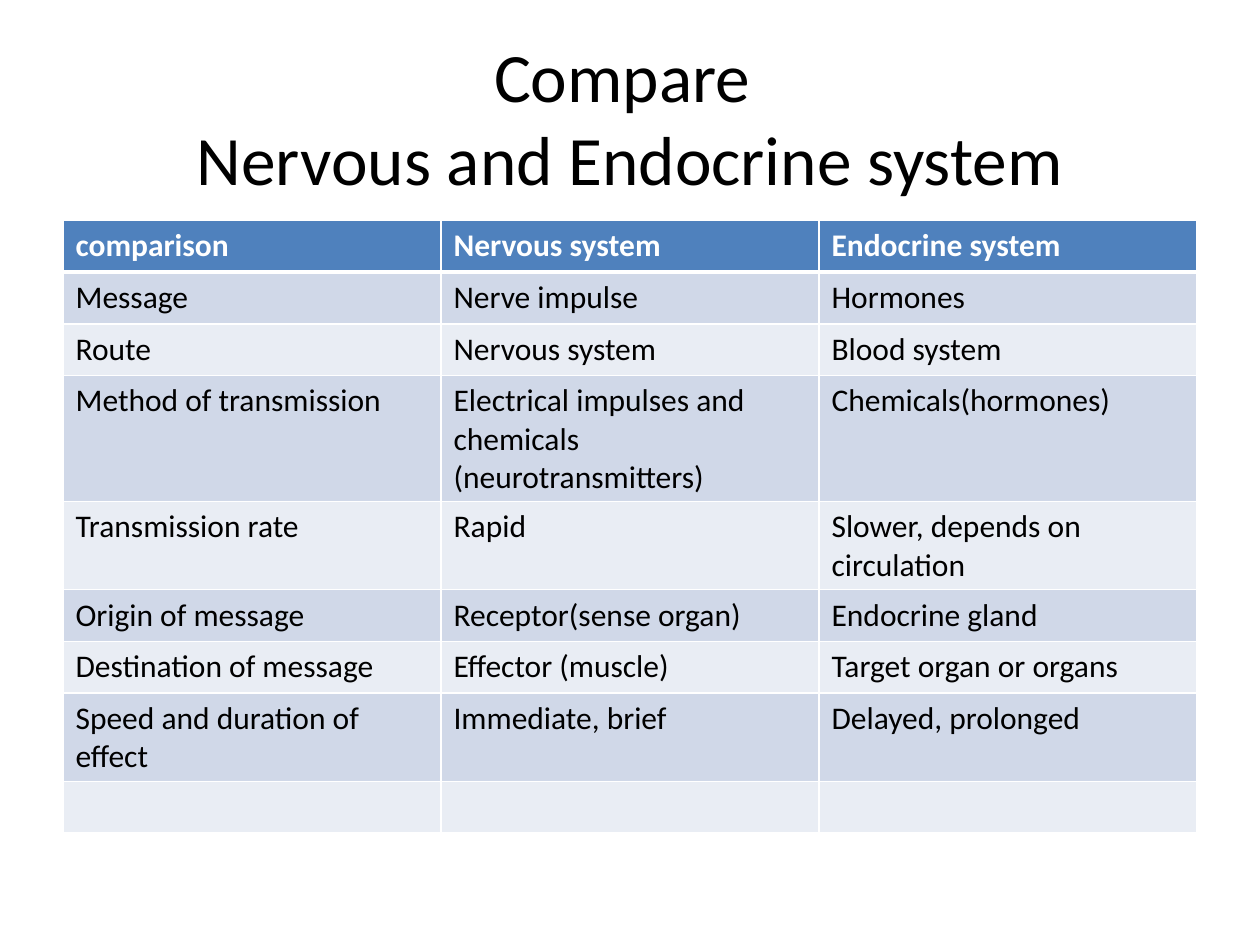
from dataclasses import dataclass

from lxml.etree import SubElement
from pptx import Presentation
from pptx.dml.color import RGBColor
from pptx.enum.text import MSO_ANCHOR, PP_ALIGN
from pptx.oxml.ns import qn
from pptx.util import Inches, Pt


@dataclass(frozen=True)
class Theme:
    font: str = "Calibri"
    text: str = "000000"
    light: str = "FFFFFF"
    header: str = "4F81BD"
    bands: tuple = ("D0D8E8", "E9EDF4")
    title_size: float = 39.6
    table_size: float = 18
    border: float = 1
    header_border: float = 3


THEME = Theme()


def write_text(frame, text, *, size, color=THEME.text, bold=False, align=PP_ALIGN.LEFT):
    paragraph = frame.paragraphs[0]
    paragraph.text = text
    paragraph.alignment = align
    for run in paragraph.runs:
        run.font.name = THEME.font
        run.font.size = Pt(size)
        run.font.bold = bold
        run.font.color.rgb = RGBColor.from_string(color)


def set_borders(cell, top, bottom):
    """Draw light cell borders; top and bottom widths are in points."""
    properties = cell._tc.get_or_add_tcPr()
    widths = {"a:lnL": THEME.border, "a:lnR": THEME.border, "a:lnT": top, "a:lnB": bottom}
    for position, (tag, width) in enumerate(widths.items()):
        line = SubElement(properties, qn(tag), w=str(Pt(width)))
        fill = SubElement(line, qn("a:solidFill"))
        SubElement(fill, qn("a:srgbClr"), val=THEME.light)
        properties.insert(position, line)


presentation = Presentation()
presentation.slide_width = Inches(10)
presentation.slide_height = Inches(7.5)
slide = presentation.slides.add_slide(presentation.slide_layouts[6])

margin = presentation.slide_width // 20
content_width = presentation.slide_width - 2 * margin

title = slide.shapes.add_textbox(margin, Inches(0.3), content_width, Inches(1.25))
title.text_frame.word_wrap = True
title.text_frame.vertical_anchor = MSO_ANCHOR.MIDDLE
write_text(title.text_frame, "Compare \vNervous and Endocrine system",
           size=THEME.title_size, align=PP_ALIGN.CENTER)

comparison_rows = [
    ("comparison", "Nervous system", "Endocrine system"),
    ("Message", "Nerve impulse", "Hormones"),
    ("Route", "Nervous system", "Blood system"),
    ("Method of transmission", "Electrical impulses and chemicals (neurotransmitters)",
     "Chemicals(hormones)"),
    ("Transmission rate", "Rapid", "Slower, depends on circulation"),
    ("Origin of message", "Receptor(sense organ)", "Endocrine gland"),
    ("Destination of message", "Effector (muscle)", "Target organ or organs"),
    ("Speed and duration of effect", "Immediate, brief", "Delayed, prolonged"),
    ("", "", ""),
]
row_height = Inches(0.41)
table = slide.shapes.add_table(
    len(comparison_rows), len(comparison_rows[0]), margin, Inches(1.75),
    content_width, row_height * len(comparison_rows)).table

for row_index, row_texts in enumerate(comparison_rows):
    is_header = row_index == 0
    table.rows[row_index].height = row_height
    for column_index, text in enumerate(row_texts):
        cell = table.cell(row_index, column_index)
        fill_color = THEME.header if is_header else THEME.bands[(row_index - 1) % 2]
        cell.fill.solid()
        cell.fill.fore_color.rgb = RGBColor.from_string(fill_color)
        set_borders(cell,
                    top=THEME.header_border if row_index == 1 else THEME.border,
                    bottom=THEME.header_border if is_header else THEME.border)
        if text:
            write_text(cell.text_frame, text, size=THEME.table_size, bold=is_header,
                       color=THEME.light if is_header else THEME.text)

presentation.save("out.pptx")
